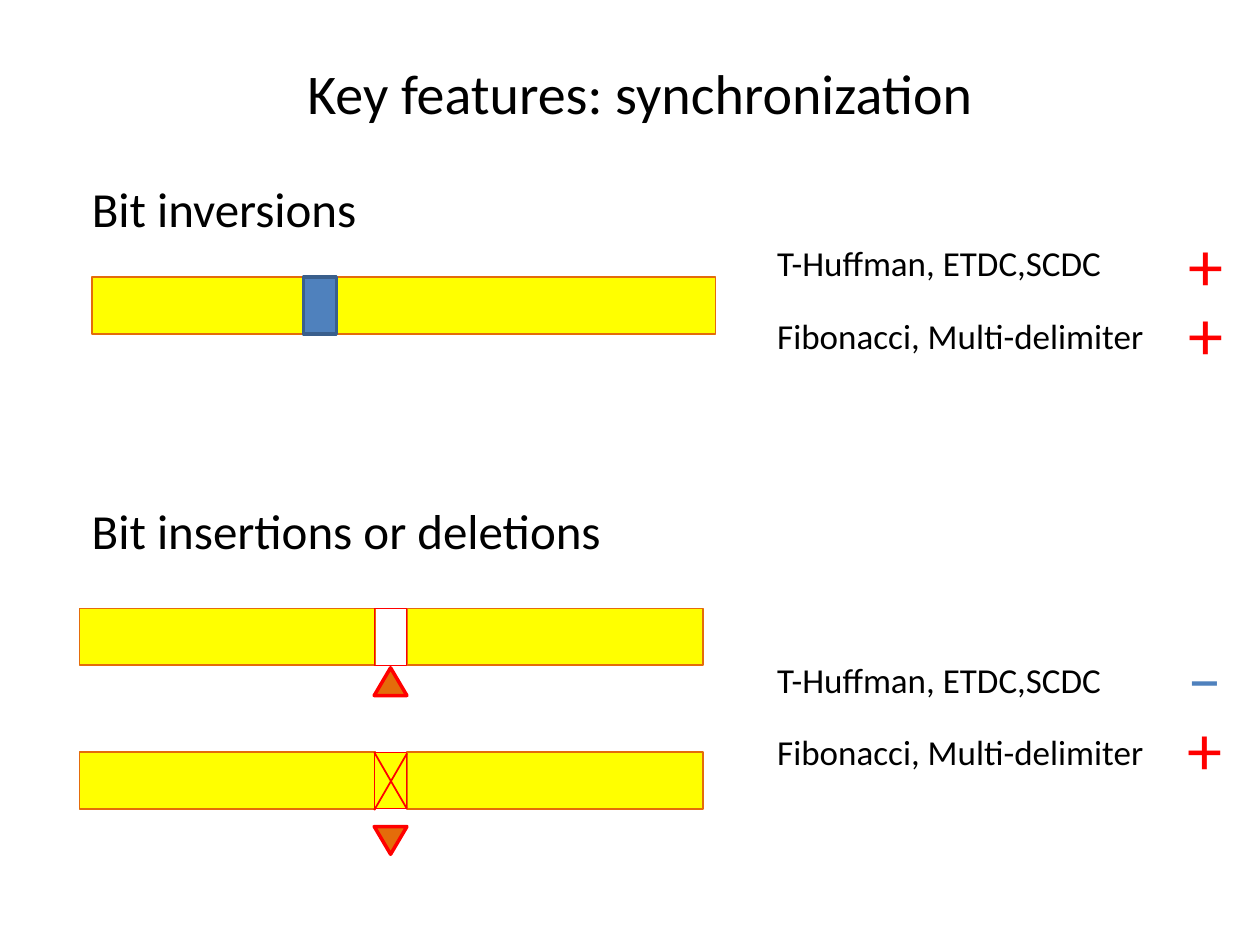
import lxml.etree
import pptx
import pptx.dml.color
import pptx.enum.shapes
import pptx.enum.text
import pptx.oxml
import pptx.oxml.ns
import pptx.util

Inches = pptx.util.Inches
Pt = pptx.util.Pt
MSO_SHAPE = pptx.enum.shapes.MSO_SHAPE
PP_ALIGN = pptx.enum.text.PP_ALIGN
MSO_ANCHOR = pptx.enum.text.MSO_ANCHOR

YELLOW, ORANGE, RED, BLUE = "FFFF00", "E46C0A", "FF0000", "4F81BD"


def color(value):
    return pptx.dml.color.RGBColor.from_string(value)


def add_text(text, left, top, width, height, size=20, fill="000000",
             align=PP_ALIGN.LEFT, anchor=MSO_ANCHOR.TOP, wrap=True):
    shape = slide.shapes.add_textbox(Inches(left), Inches(top), Inches(width), Inches(height))
    frame = shape.text_frame
    frame.word_wrap = wrap
    frame.vertical_anchor = anchor
    paragraph = frame.paragraphs[0]
    paragraph.alignment = align
    run = paragraph.add_run()
    run.text = text
    run.font.size = Pt(size)
    run.font.color.rgb = color(fill)
    run.font.name = "Calibri"
    return run


presentation = pptx.Presentation()
presentation.slide_width = Inches(10)
presentation.slide_height = Inches(7.5)
slide = presentation.slides.add_slide(presentation.slide_layouts[6])

title = add_text("Key features: synchronization", 0.39, 0.3, 9.38, 0.87, size=32,
                 align=PP_ALIGN.CENTER, anchor=MSO_ANCHOR.MIDDLE)
title_shadow = pptx.oxml.parse_xml(
    f'<a:effectLst {pptx.oxml.ns.nsdecls("a")}>'
    '<a:outerShdw blurRad="38100" dist="38100" dir="2700000" algn="tl">'
    '<a:srgbClr val="000000"><a:alpha val="43000"/></a:srgbClr>'
    '</a:outerShdw></a:effectLst>')
title.font.color.rgb = color("000000")
title._r.rPr.find(pptx.oxml.ns.qn("a:latin")).addprevious(title_shadow)

add_text("Bit inversions", 0.63, 1.37, 8.92, 0.57, size=28)
add_text("Bit insertions or deletions", 0.63, 3.92, 4.36, 0.57, size=28)

bar_height = 0.45
bit_width = 0.26
half_width = 2.35
left_half, bit_left, right_half = 0.63, 2.97, 3.23
inversion_top, insertion_top, deletion_top = 2.2, 4.83, 5.97

bars = [
    (0.73, inversion_top, 4.95, YELLOW, ORANGE, 1),
    (2.41, inversion_top, bit_width, BLUE, "3A5F8C", 2),
]
for top, bit_fill in ((insertion_top, None), (deletion_top, YELLOW)):
    bars += [
        (left_half, top, half_width, YELLOW, ORANGE, 1),
        (right_half, top, half_width, YELLOW, ORANGE, 1),
        (bit_left, top, bit_width, bit_fill, RED, 0.5),
    ]
markers = [(5.3, 0), (6.56, 180)]

shapes = [(MSO_SHAPE.RECTANGLE, left, top, width, bar_height, fill, line, weight, 0)
          for left, top, width, fill, line, weight in bars]
shapes += [(MSO_SHAPE.ISOSCELES_TRIANGLE, bit_left, top, bit_width, 0.22, ORANGE, RED, 2, turn)
           for top, turn in markers]
for kind, left, top, width, height, fill, line, weight, turn in shapes:
    shape = slide.shapes.add_shape(kind, Inches(left), Inches(top), Inches(width), Inches(height))
    shape.shadow.inherit = False
    shape.rotation = turn
    if fill:
        shape.fill.solid()
        shape.fill.fore_color.rgb = color(fill)
    else:
        shape.fill.background()
    shape.line.color.rgb = color(line)
    shape.line.width = Pt(weight)

for start, end, top in ((bit_left, right_half, deletion_top), (right_half, bit_left, 5.98)):
    connector = slide.shapes.add_connector(
        pptx.enum.shapes.MSO_CONNECTOR.STRAIGHT,
        Inches(start), Inches(top), Inches(end), Inches(top + bar_height))
    connector.line.color.rgb = color(RED)
    connector.line.width = Pt(1)
    lxml.etree.SubElement(connector._element.spPr, pptx.oxml.ns.qn("a:effectLst"))

ratings = [
    ("T-Huffman, ETDC,SCDC", 1.87, "+", 9.33, 1.71, RED),
    ("Fibonacci, Multi-delimiter", 2.45, "+", 9.33, 2.26, RED),
    ("T-Huffman, ETDC,SCDC", 5.18, "–", 9.32, 4.98, BLUE),
    ("Fibonacci, Multi-delimiter", 5.75, "+", 9.32, 5.55, RED),
]
for codes, codes_top, sign, sign_left, sign_top, sign_color in ratings:
    add_text(codes, 6.07, codes_top, 3.48, 0.44)
    add_text(sign, sign_left, sign_top, 0.48, 0.77, size=40, fill=sign_color,
             align=PP_ALIGN.CENTER, wrap=False)

presentation.save("out.pptx")
